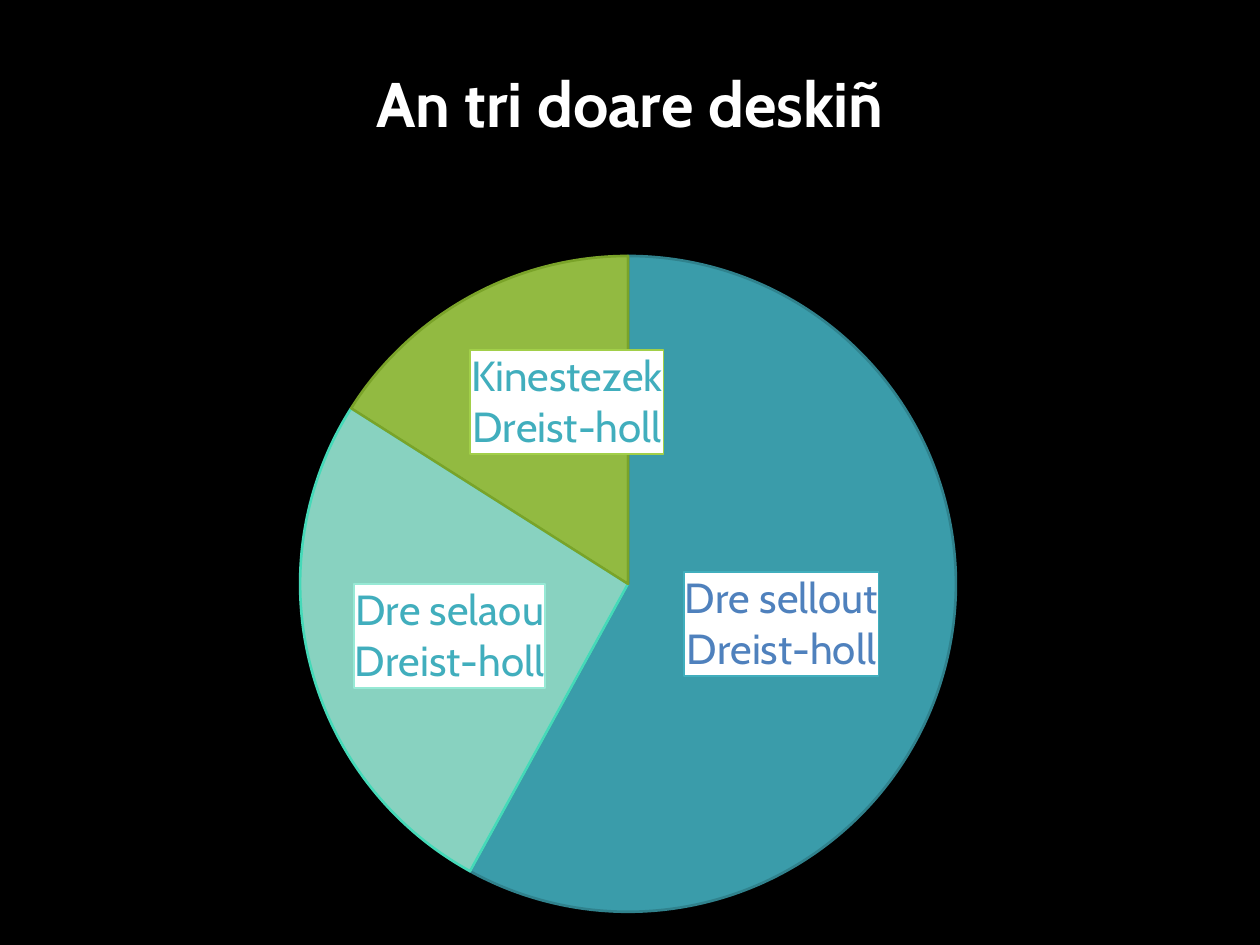
"""Build a slide with a pie chart of the three ways of learning."""
from lxml.etree import SubElement
from pptx import Presentation
from pptx.chart.data import CategoryChartData
from pptx.dml.color import RGBColor
from pptx.enum.chart import XL_CHART_TYPE, XL_LABEL_POSITION
from pptx.oxml import parse_xml
from pptx.oxml.ns import nsdecls, qn
from pptx.util import Pt

BLACK = RGBColor(0, 0, 0)
WHITE = RGBColor(0xFF, 0xFF, 0xFF)
BLUE = RGBColor(0x4F, 0x81, 0xBD)
TEAL = RGBColor(0x41, 0xAE, 0xBD)
MINT = RGBColor(0x97, 0xE9, 0xD5)
LIME = RGBColor(0xA2, 0xCF, 0x49)
TEAL_EDGE = RGBColor(0x30, 0x82, 0x8D)
MINT_EDGE = RGBColor(0x45, 0xD9, 0xB8)
LIME_EDGE = RGBColor(0x7A, 0xA3, 0x29)
WIDTH, HEIGHT = 720, 510.5


def write(tf, text, size, color, bold=False):
    for i, line in enumerate(text.split("\n")):
        p = tf.add_paragraph() if i else tf.paragraphs[0]
        r = p.add_run()
        r.text = line
        r.font.name = "Cabin"
        r.font.size = Pt(size)
        r.font.bold = bold
        r.font.color.rgb = color


def layout(x, y, size=None, **modes):
    values = dict(modes, x=x / WIDTH, y=y / HEIGHT)
    if size:
        values.update(w=size / WIDTH, h=size / HEIGHT)
    tags = "".join(f'<c:{k} val="{v}"/>' for k, v in values.items())
    return parse_xml(f'<c:layout {nsdecls("c")}><c:manualLayout>{tags}</c:manualLayout></c:layout>')


prs = Presentation()
prs.slide_width, prs.slide_height = Pt(720), Pt(540)
s = prs.slides.add_slide(prs.slide_layouts[6])
s.background.fill.solid()
s.background.fill.fore_color.rgb = BLACK

data = CategoryChartData()
data.categories = ["Dre selaou", "Dre sellout", "Kinestezek"]
data.add_series("Series 1", (58, 26, 16))
chart = s.shapes.add_chart(XL_CHART_TYPE.PIE, Pt(0), Pt(21), Pt(WIDTH), Pt(HEIGHT), data).chart
chart.has_legend = False
chart.font.name = "Cabin"
chart.font.size = Pt(10)
chart.font.color.rgb = WHITE

chart.has_title = True
title = chart.chart_title
write(title.text_frame, "An tri doare deskiñ", 36, WHITE, bold=True)
title.include_in_layout = False
for old in title._element.findall(qn("c:layout")):
    title._element.remove(old)
title._element.find(qn("c:tx")).addnext(layout(208.6, 6.4, xMode="edge", yMode="edge"))

area = chart._chartSpace.chart.plotArea
for old in area.findall(qn("c:layout")):
    area.remove(old)
area.insert(0, layout(171.5, 125.3, 374.8, layoutTarget="inner", xMode="edge", yMode="edge"))

plot = chart.plots[0]
plot.vary_by_categories = True
plot.has_data_labels = True
plot.data_labels.show_category_name = True
plot.data_labels.show_value = False
plot.data_labels.show_percentage = False

slices = [
    ("Dre sellout", TEAL, TEAL_EDGE, BLUE, -3.2, -0.5),
    ("Dre selaou", MINT, MINT_EDGE, TEAL, -11.2, 6.5),
    ("Kinestezek", LIME, LIME_EDGE, TEAL, 10.2, -21.8),
]
for i, (name, color, edge, ink, dx, dy) in enumerate(slices):
    point = plot.series[0].points[i]
    point.format.fill.solid()
    point.format.fill.fore_color.rgb = color
    srgb = point.format.fill._xPr.find(".//" + qn("a:srgbClr"))
    SubElement(srgb, qn("a:alpha"), val="90000")
    point.format.line.color.rgb = edge
    point.format.line.width = Pt(1.5)

    label = point.data_label
    write(label.text_frame, f"{name}\nDreist-holl", 24, ink)
    label.position = XL_LABEL_POSITION.CENTER
    dLbl = label._dLbl
    dLbl.find(qn("c:idx")).addnext(layout(dx, dy))
    box = parse_xml(
        f'<c:spPr {nsdecls("c", "a")}><a:solidFill><a:srgbClr val="{WHITE}"/></a:solidFill>'
        f'<a:ln w="12700"><a:solidFill><a:srgbClr val="{color}"/></a:solidFill></a:ln></c:spPr>')
    dLbl.find(qn("c:tx")).addnext(box)

prs.save("out.pptx")
